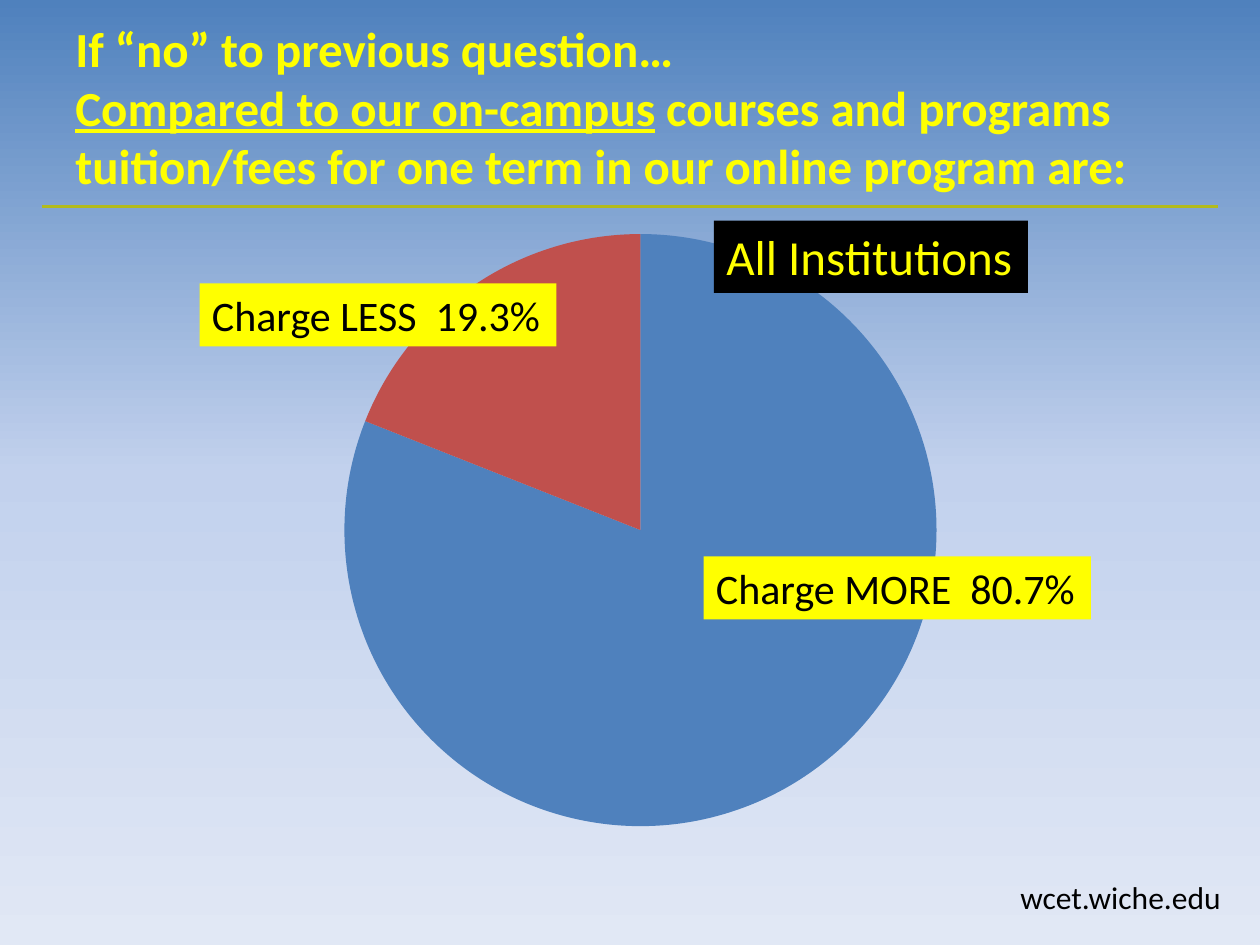
"""Build the tuition comparison slide with its pie chart."""
from copy import deepcopy
from dataclasses import dataclass

from lxml.etree import SubElement, fromstring
from pptx import Presentation
from pptx.chart.data import CategoryChartData
from pptx.dml.color import RGBColor
from pptx.enum.chart import XL_CHART_TYPE
from pptx.enum.shapes import MSO_CONNECTOR, MSO_SHAPE
from pptx.enum.text import MSO_ANCHOR, PP_ALIGN
from pptx.oxml.ns import qn
from pptx.util import Inches, Pt


@dataclass(frozen=True)
class Theme:
    """Colours, font and type sizes of the deck."""
    font: str = "Calibri"
    yellow: str = "FFFF00"
    black: str = "000000"
    rule: str = "B2BB1C"
    slices: tuple = ("4F81BD", "C0504D")
    sky: tuple = ((0, "4F81BD"), (0.5, "C2D1ED"), (1, "E1E8F5"))
    title: int = 28
    label: int = 24
    footer: int = 18
    chart: int = 10


class Deck:
    """Hold the style and the current slide, set on 120 columns and 90 rows."""

    COLUMNS, ROWS = 120, 90

    def __init__(self, prs, theme):
        self.prs, self.theme = prs, theme
        self.s = prs.slides.add_slide(prs.slide_layouts[6])

    def place(self, x, y, w, h):
        """Turn columns and rows into lengths."""
        column = self.prs.slide_width / self.COLUMNS
        row = self.prs.slide_height / self.ROWS
        return round(x * column), round(y * row), round(w * column), round(h * row)

    def style(self, font, size, color, bold=False):
        """Set the family, size, colour and weight of a font."""
        font.name, font.size, font.bold = self.theme.font, Pt(size), bold
        font.color.rgb = RGBColor.from_string(color)

    def background(self, stops):
        """Fill the slide with a gradient running from top to bottom."""
        fill = self.s.background.fill
        fill.gradient()
        fill.gradient_angle = 270
        gs_list = self.s.element.find(".//" + qn("a:gsLst"))
        gs_list.insert(1, deepcopy(gs_list[0]))
        for stop, (position, color) in zip(fill.gradient_stops, stops):
            stop.position = position
            stop.color.rgb = RGBColor.from_string(color)

    def rule(self, x, y, w, color, weight):
        """Draw a horizontal line."""
        left, top, width, _ = self.place(x, y, w, 0)
        line = self.s.shapes.add_connector(
            MSO_CONNECTOR.STRAIGHT, left, top, left + width, top)
        line.line.color.rgb = RGBColor.from_string(color)
        line.line.width = Pt(weight)
        SubElement(line.element.spPr, qn("a:effectLst"))

    def text(self, box, lines, size, color, bold=False):
        """Add a text box of lines, each a list of (text, underlined) runs."""
        tf = self.s.shapes.add_textbox(*self.place(*box)).text_frame
        tf.word_wrap = True
        tf.vertical_anchor = MSO_ANCHOR.MIDDLE
        p = tf.paragraphs[0]
        self.style(p.font, size, color, bold)
        for i, runs in enumerate(lines):
            if i:
                p.add_line_break()
            for text, underlined in runs:
                r = p.add_run()
                r.text = text
                r.font.underline = underlined

    def label(self, box, text, size, color, fill):
        """Add a filled box with one line of text."""
        sp = self.s.shapes.add_shape(MSO_SHAPE.RECTANGLE, *self.place(*box))
        sp.shadow.inherit = False
        sp.fill.solid()
        sp.fill.fore_color.rgb = RGBColor.from_string(fill)
        sp.line.fill.background()
        tf = sp.text_frame
        tf.word_wrap = False
        tf.vertical_anchor = MSO_ANCHOR.TOP
        p = tf.paragraphs[0]
        p.text, p.alignment = text, PP_ALIGN.LEFT
        self.style(p.font, size, color)

    def pie(self, box, values, inner):
        """Add a pie chart whose plot takes the given share of its frame."""
        data = CategoryChartData()
        data.categories = [str(i + 1) for i in range(len(values))]
        data.add_series("Series 1", values)
        chart = self.s.shapes.add_chart(
            XL_CHART_TYPE.PIE, *self.place(*box), data).chart
        chart.has_title = chart.has_legend = False
        self.style(chart.font, self.theme.chart, self.theme.black)
        plot = chart.plots[0]
        plot.vary_by_categories = True
        for i, color in enumerate(self.theme.slices):
            fill = plot.series[0].points[i].format.fill
            fill.solid()
            fill.fore_color.rgb = RGBColor.from_string(color)
        area = chart.element.find(".//" + qn("c:plotArea"))
        for old in area.findall(qn("c:layout")):
            area.remove(old)
        margin = round((1 - inner) / 2, 2)
        settings = [("layoutTarget", "inner"), ("xMode", "edge"), ("yMode", "edge"),
                    ("x", margin), ("y", margin), ("w", inner), ("h", inner)]
        layout = fromstring(
            '<c:layout xmlns:c="http://schemas.openxmlformats.org/drawingml/2006/chart"/>')
        manual = SubElement(layout, qn("c:manualLayout"))
        for tag, value in settings:
            SubElement(manual, qn("c:" + tag)).set("val", str(value))
        area.insert(0, layout)


def main():
    """Build and save the slide."""
    prs = Presentation()
    prs.slide_width, prs.slide_height = Inches(10), Inches(7.5)
    theme = Theme()
    deck = Deck(prs, theme)
    deck.background(theme.sky)
    deck.rule(4, 19.7, 112, theme.rule, 1.5)
    deck.text((96, 83, 23, 4.8), [[("wcet.wiche.edu", False)]],
              theme.footer, theme.black)
    deck.pie((31, 20, 60, 61), (81, 19), 0.94)
    deck.text((6, 3.3, 108, 13.7), [
        [("If “no” to previous question…", False)],
        [("Compared to our on-campus", True),
         (" courses and programs tuition/fees for one term"
          " in our online program are:", False)],
    ], theme.title, theme.yellow, bold=True)
    for box, text, size, color, fill in (
        ((67, 53, 36.9, 6), "Charge MORE  80.7%",
         theme.label, theme.black, theme.yellow),
        ((68, 21, 29.9, 6.9), "All Institutions",
         theme.title, theme.yellow, theme.black),
        ((19, 27, 34, 6), "Charge LESS  19.3%",
         theme.label, theme.black, theme.yellow),
    ):
        deck.label(box, text, size, color, fill)
    prs.save("out.pptx")


if __name__ == "__main__":
    main()
